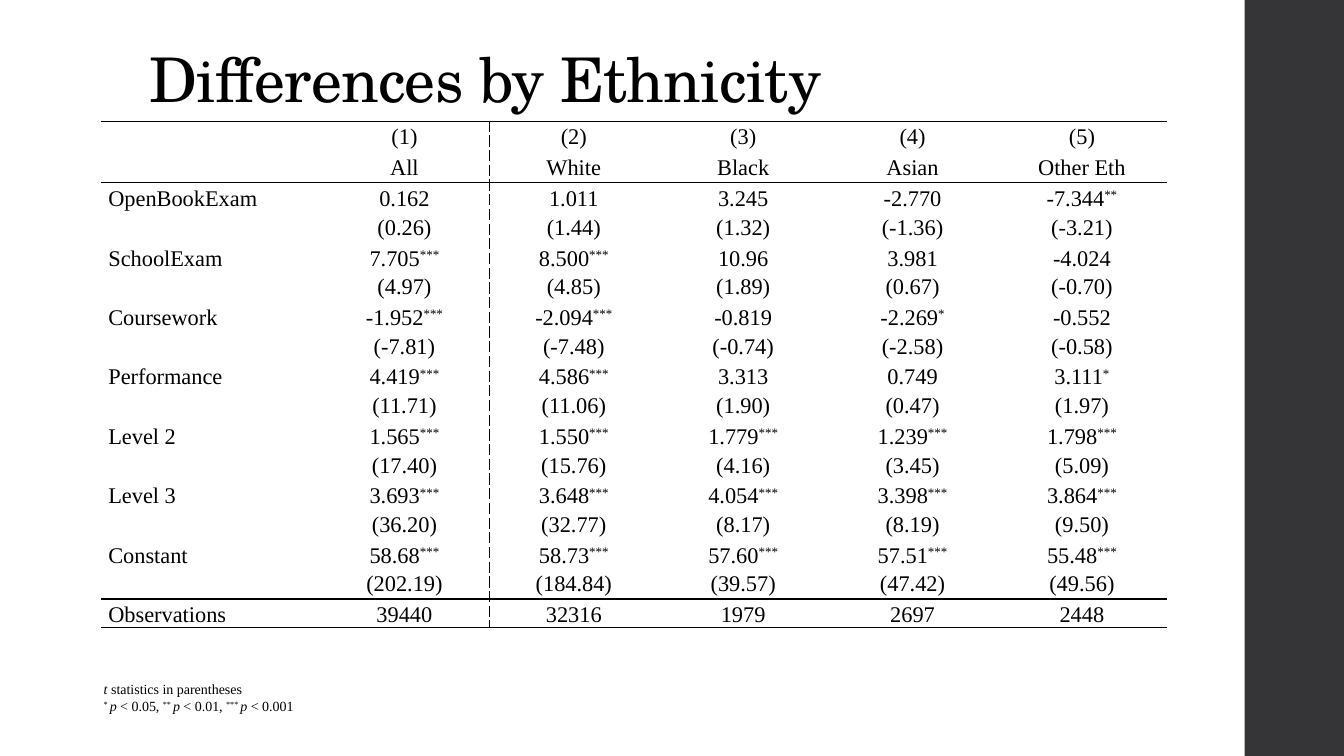
import pptx
import pptx.dml.color
import pptx.enum.shapes
import pptx.enum.text
import pptx.oxml
import pptx.oxml.ns
import pptx.util

Pt = pptx.util.Pt
ALIGN = pptx.enum.text.PP_ALIGN
ANCHOR = pptx.enum.text.MSO_ANCHOR

COLORS = {"ink": "000000", "bar": "353537"}
TITLE_FONT = "TeX Gyre Schola"
BODY_FONT = "Times New Roman"

GROUPS = ["All", "White", "Black", "Asian", "Other Eth"]
# variable, estimates by group, t statistics by group
ESTIMATES = [
    ("OpenBookExam", "0.162 1.011 3.245 -2.770 -7.344**", "0.26 1.44 1.32 -1.36 -3.21"),
    ("SchoolExam", "7.705*** 8.500*** 10.96 3.981 -4.024", "4.97 4.85 1.89 0.67 -0.70"),
    ("Coursework", "-1.952*** -2.094*** -0.819 -2.269* -0.552", "-7.81 -7.48 -0.74 -2.58 -0.58"),
    ("Performance", "4.419*** 4.586*** 3.313 0.749 3.111*", "11.71 11.06 1.90 0.47 1.97"),
    ("Level 2", "1.565*** 1.550*** 1.779*** 1.239*** 1.798***", "17.40 15.76 4.16 3.45 5.09"),
    ("Level 3", "3.693*** 3.648*** 4.054*** 3.398*** 3.864***", "36.20 32.77 8.17 8.19 9.50"),
    ("Constant", "58.68*** 58.73*** 57.60*** 57.51*** 55.48***", "202.19 184.84 39.57 47.42 49.56"),
]
OBSERVATIONS = "39440 32316 1979 2697 2448"
SIGNIFICANCE = [("* ", "0.05, "), ("** ", "0.01, "), ("*** ", "0.001")]


def set_all(target, values):
    for name, value in values.items():
        setattr(target, name, value)


def add_run(paragraph, text, size, font=BODY_FONT, italic=False, **xml_attributes):
    """Add a run; xml_attributes go to its rPr, such as baseline or spc."""
    run = paragraph.add_run()
    run.text = text
    set_all(run.font, {"name": font, "size": Pt(size), "italic": italic})
    run.font.color.rgb = pptx.dml.color.RGBColor.from_string(COLORS["ink"])
    for name, value in xml_attributes.items():
        run._r.get_or_add_rPr().set(name, str(value))


def draw_side_bar(slide, left, top, width, height):
    bar = slide.shapes.add_shape(
        pptx.enum.shapes.MSO_SHAPE.RECTANGLE, Pt(left), Pt(top), Pt(width), Pt(height))
    bar.fill.solid()
    bar.fill.fore_color.rgb = pptx.dml.color.RGBColor.from_string(COLORS["bar"])
    bar.line.fill.background()
    bar.shadow.inherit = False


def fill_title(slide, left, top, width, height):
    heading = slide.shapes.title
    set_all(heading, {"left": Pt(left), "top": Pt(top), "width": Pt(width), "height": Pt(height)})
    set_all(heading.text_frame, {"vertical_anchor": ANCHOR.BOTTOM, "word_wrap": True,
                                 "auto_size": pptx.enum.text.MSO_AUTO_SIZE.NONE})
    line = heading.text_frame.paragraphs[0]
    set_all(line, {"alignment": ALIGN.LEFT, "line_spacing": 0.9})
    add_run(line, "Differences by Ethnicity", 44, TITLE_FONT, spc=-50)


def regression_rows():
    rows = [[""] + [f"({n})" for n in range(1, len(GROUPS) + 1)], [""] + GROUPS]
    for variable, estimates, statistics in ESTIMATES:
        rows.append([variable] + estimates.split())
        rows.append([""] + [f"({t})" for t in statistics.split()])
    return rows + [["Observations"] + OBSERVATIONS.split()]


def set_borders(cell, dashes):
    """Give each side named in dashes a thin line, and the others none."""
    properties = cell._tc.get_or_add_tcPr()
    for position, side in enumerate("LRTB"):
        if side in dashes:
            paint = (f'<a:solidFill><a:srgbClr val="{COLORS["ink"]}"/></a:solidFill>'
                     f'<a:prstDash val="{dashes[side]}"/>')
        else:
            paint = "<a:noFill/>"
        properties.insert(position, pptx.oxml.parse_xml(
            f'<a:ln{side} {pptx.oxml.ns.nsdecls("a")} w="{Pt(1)}">{paint}</a:ln{side}>'))


def draw_regression_table(slide, left, top, width, height):
    rows = regression_rows()
    label_width = 156
    group_width = (width - label_width) / len(GROUPS)
    table = slide.shapes.add_table(
        len(rows), len(rows[0]), Pt(left), Pt(top), Pt(width), Pt(height)).table
    set_all(table, {"first_row": False, "horz_banding": False})
    for index, column in enumerate(table.columns):
        column.width = Pt(group_width if index else label_width)
    for row in table.rows:
        row.height = Pt(height / len(rows))

    last = len(rows) - 1
    ruled_above = {0, 2, last}
    ruled_below = {1, last - 1, last}
    for r, row in enumerate(rows):
        for c, text in enumerate(row):
            cell = table.cell(r, c)
            set_all(cell, {"margin_left": Pt(5), "margin_right": Pt(5),
                           "margin_top": 0, "margin_bottom": 0})
            cell.fill.background()
            sides = {"L": ("sysDash", c == 2), "R": ("sysDash", c == 1),
                     "T": ("solid", r in ruled_above), "B": ("solid", r in ruled_below)}
            set_borders(cell, {side: dash for side, (dash, shown) in sides.items() if shown})
            if not text:
                continue
            line = cell.text_frame.paragraphs[0]
            set_all(line, {"alignment": ALIGN.CENTER if c else ALIGN.LEFT,
                           "line_spacing": 1.15, "space_after": Pt(8)})
            value = text.rstrip("*")
            add_run(line, value, 16)
            if value != text:
                add_run(line, text[len(value):], 16, baseline=30000)


def draw_footnote(slide, left, top, width, height):
    note = slide.shapes.add_textbox(Pt(left), Pt(top), Pt(width), Pt(height)).text_frame
    set_all(note, {"word_wrap": True, "vertical_anchor": ANCHOR.MIDDLE})
    statistic = note.paragraphs[0]
    add_run(statistic, "t", 10, italic=True)
    add_run(statistic, " statistics in parentheses", 10)
    levels = note.add_paragraph()
    for stars, level in SIGNIFICANCE:
        add_run(levels, stars, 10, baseline=30000)
        add_run(levels, "p", 10, italic=True)
        add_run(levels, f" < {level}", 10)


def main():
    deck = pptx.Presentation()
    set_all(deck, {"slide_width": Pt(960), "slide_height": Pt(540)})
    slide = deck.slides.add_slide(deck.slide_layouts[5])
    draw_side_bar(slide, 889, 0, 71, 540)
    fill_title(slide, 99.4, 28.8, 763, 57.6)
    draw_regression_table(slide, 72.4, 86.6, 761, 348)
    draw_footnote(slide, 67, 482.4, 724, 31.7)
    deck.save("out.pptx")


if __name__ == "__main__":
    main()
